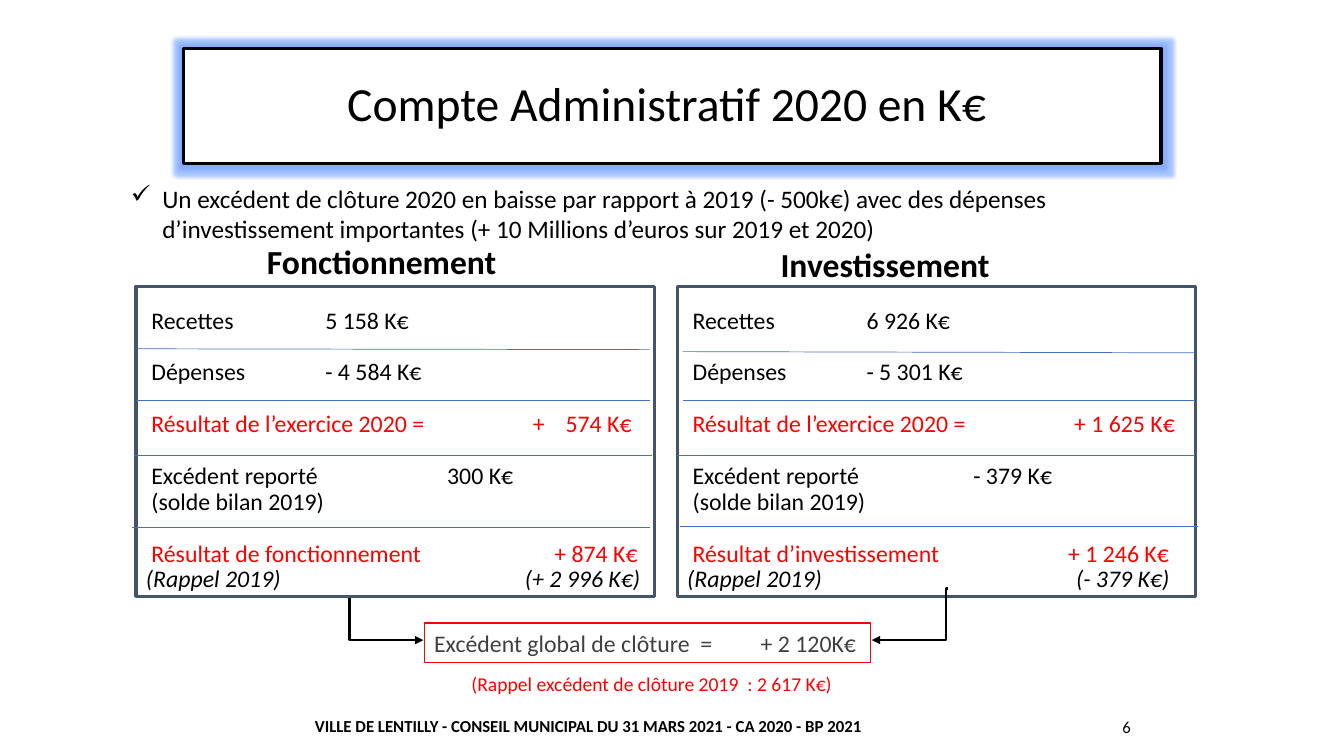
from lxml.etree import SubElement as Sub
from pptx import Presentation
from pptx.dml.color import RGBColor
from pptx.enum.shapes import MSO_CONNECTOR as Link, MSO_SHAPE as Form
from pptx.enum.text import MSO_ANCHOR as Anchor, PP_ALIGN as Align
from pptx.oxml.ns import qn
from pptx.util import Cm, Pt

BLACK = RGBColor(0, 0, 0)
WHITE = RGBColor(255, 255, 255)
RED = RGBColor(255, 0, 0)
GREY = RGBColor(0x40, 0x40, 0x40)
SLATE = RGBColor(0x44, 0x54, 0x6A)
BLUE = RGBColor(0x44, 0x72, 0xC4)

TITLE = "Compte Administratif 2020 en K€ "
POINT = ("Un excédent de clôture 2020 en baisse par rapport à 2019 (- 500k€) avec des dépenses "
         "d’investissement importantes (+ 10 Millions d’euros sur 2019 et 2020)")
TOTAL = "Excédent global de clôture  =\t+ 2 120K€"
RECALL = "(Rappel excédent de clôture 2019  : 2 617 K€)"
FOOTER = "VILLE DE LENTILLY - CONSEIL MUNICIPAL DU 31 MARS 2021 - CA 2020 - BP 2021"
PAGE = "6"

HEADS = [
    ("Fonctionnement", (4.22, 5.74, 10.8, 1.83), Anchor.MIDDLE),
    ("Investissement", (17.2, 5.46, 10.21, 1.83), Anchor.BOTTOM),
]
LABELS = [" Recettes", " Dépenses", " Résultat de l’exercice 2020 =", " Excédent reporté",
          " (solde bilan 2019)", " Résultat {}", "(Rappel 2019)"]
RED_ROWS, TIGHT_ROWS, LAST = (2, 5), (0, 4, 6), 6

INVEST = {
    "left": 17.07,
    "name": "d’investissement",
    "values": ["6 926 K€", "- 5 301 K€", "+ 1 625 K€", "- 379 K€", "", "+ 1 246 K€", "(- 379 K€)"],
    "stops": [4.52, 4.52, 9.75, 7.21, 0, 9.6, 9.8],
    "rules": [(17.2, 8.86, 30.12, 8.89), (17.2, 10.08, 30.12, 10.08),
              (17.07, 11.48, 30.12, 11.48), (17.15, 13.26, 30.18, 13.26)],
}
FONCT = {
    "left": 3.43,
    "name": "de fonctionnement",
    "values": ["5 158 K€", "- 4 584 K€", "+\t574 K€", "300 K€", "", "+ 874 K€", "(+ 2 996 K€)"],
    "stops": [4.52, 4.52, 9.75, 7.59, 0, 10.29, 9.55],
    "rules": [(3.43, 8.79, 16.38, 8.81), (3.43, 10.08, 16.38, 10.08),
              (3.38, 11.48, 16.43, 11.48), (3.33, 13.28, 16.38, 13.28)],
}
ELBOWS = [(8.76, 14.83, 10.67, 16.13), (23.88, 14.83, 21.97, 16.13)]
PANEL_TOP, PANEL_WIDE, PANEL_HIGH = 7.21, 13.06, 7.82
SUM_STOP = 12.24

deck = Presentation()
deck.slide_width, deck.slide_height = Cm(33.87), Cm(19.05)
slide = deck.slides.add_slide(deck.slide_layouts[6])


def style(item, **looks):
    for key, value in looks.items():
        setattr(item, key, value)


def write(para, text, color=BLACK, stops=(), **looks):
    run = para.add_run()
    run.text = text
    style(run.font, name="Calibri", **looks)
    run.font.color.rgb = color
    if stops:
        tabs = Sub(para._p.get_or_add_pPr(), qn("a:tabLst"))
        for place, side in stops:
            Sub(tabs, qn("a:tab"), pos=str(Cm(place)), algn=side)


def label(area, text, anchor=Anchor.TOP, align=Align.LEFT, **looks):
    box = slide.shapes.add_textbox(*map(Cm, area))
    style(box.text_frame, word_wrap=True, vertical_anchor=anchor)
    para = box.text_frame.paragraphs[0]
    para.alignment = align
    write(para, text, **looks)
    return box


def frame(area, edge, width):
    box = slide.shapes.add_shape(Form.RECTANGLE, *map(Cm, area))
    box.shadow.inherit = False
    box.fill.solid()
    box.fill.fore_color.rgb = WHITE
    box.line.color.rgb = edge
    box.line.width = Pt(width)
    box.text_frame.word_wrap = True
    return box


def link(kind, ends, color, width):
    line = slide.shapes.add_connector(kind, *map(Cm, ends))
    line.line.color.rgb = color
    line.line.width = Pt(width)
    Sub(line._element.spPr, qn("a:effectLst"))
    return line


def panel(side):
    box = frame((side["left"], PANEL_TOP, PANEL_WIDE, PANEL_HIGH), SLATE, 2.25)
    text = box.text_frame
    text.vertical_anchor = Anchor.TOP
    for row, (name, value, stop) in enumerate(zip(LABELS, side["values"], side["stops"])):
        para = text.add_paragraph() if row else text.paragraphs[0]
        style(para, alignment=Align.LEFT, line_spacing=0.9 if row else 1.5,
              space_before=Pt(0 if row in TIGHT_ROWS else 18.7))
        words = name.format(side["name"])
        stops = [(stop, "l")] if value else []
        if "\t" in value:
            stops.append((SUM_STOP, "r"))
        write(para, words + "\t" + value if value else words,
              RED if row in RED_ROWS else BLACK, stops, size=Pt(17), italic=row == LAST)
    for ends in side["rules"]:
        link(Link.STRAIGHT, ends, BLUE, 0.5)


title = frame((4.62, 1.22, 24.64, 2.9), BLACK, 2.25)
title.text_frame.vertical_anchor = Anchor.MIDDLE
head = title.text_frame.paragraphs[0]
style(head, alignment=Align.CENTER, line_spacing=0.9)
write(head, TITLE, size=Pt(34))
glow = Sub(title._element.spPr.find(qn("a:effectLst")), qn("a:glow"), rad=str(Cm(0.18)))
tint = Sub(glow, qn("a:srgbClr"), val="6F9DFF")
Sub(tint, qn("a:alpha"), val="60000")

for text, area, anchor in HEADS:
    box = label(area, text, anchor, Align.CENTER, size=Pt(24), bold=True)
    box.text_frame.paragraphs[0].line_spacing = 0.9

panel(INVEST)

total = frame((10.69, 15.7, 11.25, 0.99), RED, 0.75)
total.fill.background()
total.text_frame.vertical_anchor = Anchor.MIDDLE
line = total.text_frame.paragraphs[0]
line.alignment = Align.LEFT
write(line, TOTAL, GREY, [(8.23, "l")], size=Pt(17))

for ends in ELBOWS:
    arrow = link(Link.ELBOW, ends, BLACK, 1.5)
    Sub(arrow.line._get_or_add_ln(), qn("a:tailEnd"), type="triangle")
    bend = arrow._element.spPr.find(qn("a:prstGeom")).find(qn("a:avLst"))
    Sub(bend, qn("a:gd"), name="adj1", fmla="val 2600")

point = label((3.05, 4.5, 25.96, 1.8), POINT, size=Pt(18))
props = point.text_frame.paragraphs[0]._p.get_or_add_pPr()
props.set("marL", str(Cm(0.79)))
props.set("indent", str(Cm(-0.79)))
Sub(props, qn("a:buChar"), char="✓")

label((11.63, 16.81, 9.91, 0.86), RECALL, color=RED, size=Pt(14))
label((7.09, 17.78, 15.49, 1.02), FOOTER, Anchor.MIDDLE, Align.CENTER, size=Pt(12), bold=True)
label((27.33, 17.81, 1.42, 1.02), PAGE, Anchor.MIDDLE, Align.RIGHT, size=Pt(12))

panel(FONCT)

deck.save("out.pptx")
